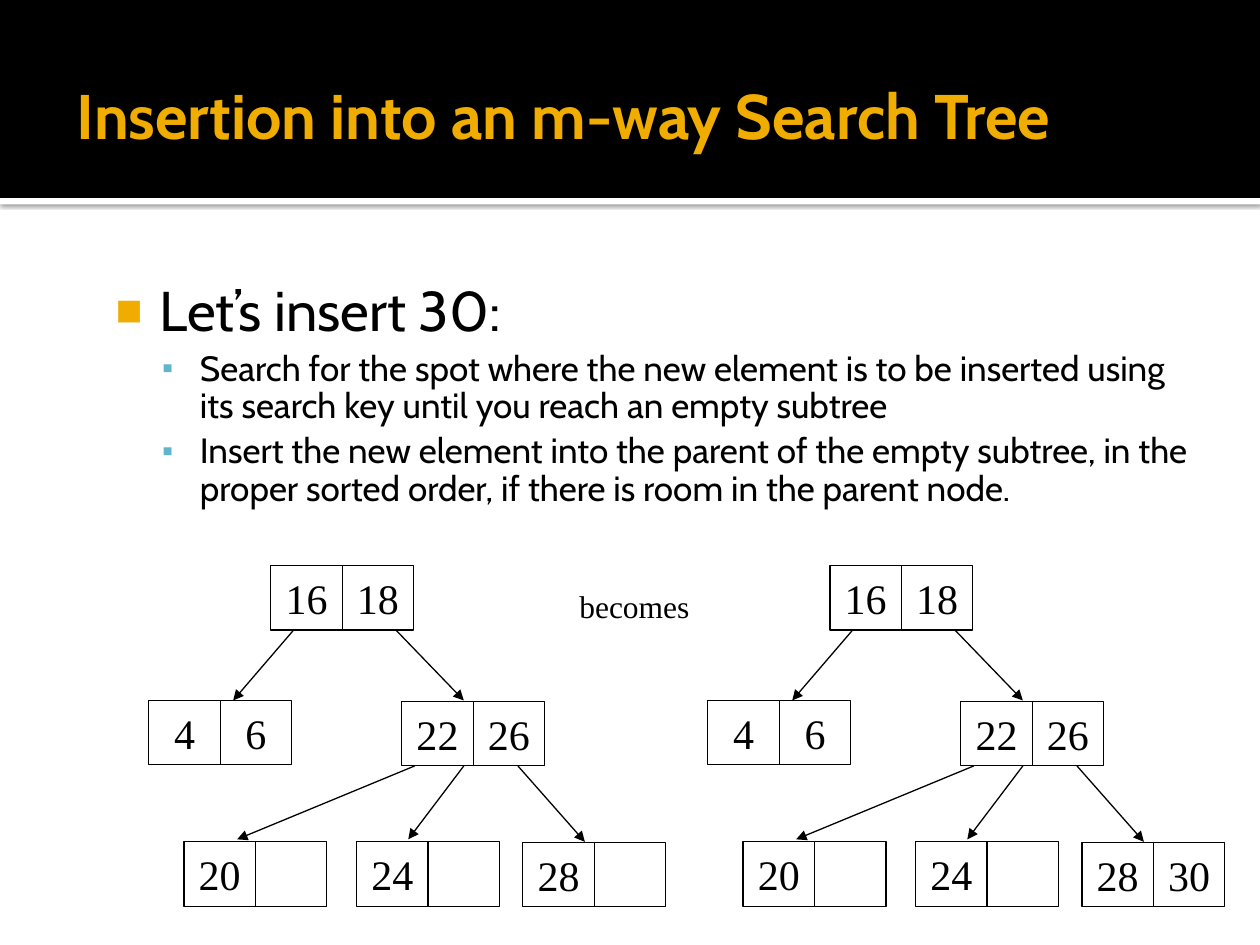
from lxml.etree import SubElement
from pptx import Presentation
from pptx.dml.color import RGBColor
from pptx.enum.shapes import MSO_CONNECTOR, MSO_SHAPE
from pptx.enum.text import MSO_ANCHOR, MSO_AUTO_SIZE, PP_ALIGN
from pptx.oxml import parse_xml
from pptx.oxml.ns import nsdecls, qn
from pptx.util import Cm, Pt

BLACK = RGBColor(0x00, 0x00, 0x00)
WHITE = RGBColor(0xFF, 0xFF, 0xFF)
GOLD = RGBColor(0xF0, 0xAD, 0x00)
SKY = RGBColor(0x60, 0xB5, 0xCC)

# Tree geometry in centimetres
CELL_WIDTH, CELL_HEIGHT = 1.44, 1.3
TREE_SHIFT = 11.27
NODES = [  # left, top, keys
    (5.46, 11.4, ("16", "18")),
    (3.0, 14.12, ("4", "6")),
    (8.1, 14.14, ("22", "26")),
    (3.71, 16.97, ("20", "")),
    (7.19, 16.97, ("24", "")),
]
LAST_LEAF = (10.54, 16.98)
EDGES = [  # start x, start y, end x, end y
    (5.92, 12.7, 4.7, 14.12),
    (7.98, 12.7, 9.35, 14.12),
    (8.36, 15.44, 4.78, 16.92),
    (9.35, 15.44, 8.23, 16.92),
    (10.44, 15.44, 11.79, 16.97),
]


def write_text(paragraph, text, size, font="Times New Roman", color=BLACK,
               bold=False, align=PP_ALIGN.LEFT):
    paragraph.alignment = align
    run = paragraph.add_run()
    run.text = text
    run.font.name = font
    run.font.size = Pt(size)
    run.font.bold = bold
    run.font.color.rgb = color


def set_bullet(paragraph, mark, color, percent, margin, hanging):
    properties = paragraph._p.get_or_add_pPr()
    properties.set("marL", str(Cm(margin)))
    properties.set("indent", str(-Cm(hanging)))
    bullet_color = SubElement(properties, qn("a:buClr"))
    SubElement(bullet_color, qn("a:srgbClr"), val=str(color))
    SubElement(properties, qn("a:buSzPct"), val=str(percent * 1000))
    SubElement(properties, qn("a:buFont"), typeface="Arial")
    SubElement(properties, qn("a:buChar"), char=mark)


class SlideBuilder:
    heading_font = "Cabin"
    line_width = Pt(0.75)

    def __init__(self, slide):
        self.slide = slide

    def band(self, top, height, color):
        """Full-width bar placed behind everything else."""
        shape = self.slide.shapes.add_shape(
            MSO_SHAPE.RECTANGLE, 0, Cm(top), Cm(25.4), Cm(height))
        shape.shadow.inherit = False
        shape.fill.solid()
        shape.fill.fore_color.rgb = color
        shape.line.fill.background()
        self.slide.shapes._spTree.insert(2, shape._element)
        return shape

    def drop_shadow(self, shape):
        effects = shape._element.spPr.find(qn("a:effectLst"))
        effects.append(parse_xml(
            f'<a:outerShdw {nsdecls("a")} blurRad="{Pt(2.5)}" dist="{Pt(0.8)}" '
            'dir="5400000" algn="tl" rotWithShape="0"><a:srgbClr val="000000">'
            '<a:alpha val="60000"/></a:srgbClr></a:outerShdw>'))

    def place(self, shape, left, top, width, height, margins, anchor):
        shape.left, shape.top = Cm(left), Cm(top)
        shape.width, shape.height = Cm(width), Cm(height)
        frame = shape.text_frame
        frame.word_wrap = True
        frame.auto_size = MSO_AUTO_SIZE.NONE
        frame.vertical_anchor = anchor
        (frame.margin_left, frame.margin_top,
         frame.margin_right, frame.margin_bottom) = map(Cm, margins)
        return frame

    def title(self, text):
        frame = self.place(self.slide.shapes.title, 1.3, 0.71, 22.78, 3.18,
                           (0.25, 0.13, 0.13, 0.13), MSO_ANCHOR.MIDDLE)
        write_text(frame.paragraphs[0], text, 36, font=self.heading_font,
                   color=GOLD, bold=True)

    def body(self, heading, points):
        frame = self.place(self.slide.placeholders[1], 1.85, 5.46, 22.38, 5.49,
                           (0.15, 0.25, 0.25, 0.13), MSO_ANCHOR.TOP)
        paragraph = frame.paragraphs[0]
        paragraph.line_spacing = 0.9
        paragraph.space_before = Pt(0)
        set_bullet(paragraph, "■", GOLD, 80, 1.22, 0.89)
        write_text(paragraph, heading, 32, font=self.heading_font)
        for point in points:
            paragraph = frame.add_paragraph()
            paragraph.level = 1
            paragraph.line_spacing = 0.9
            paragraph.space_before = Pt(4)
            set_bullet(paragraph, "▪", SKY, 90, 2.03, 0.76)
            write_text(paragraph, point, 20, font=self.heading_font)

    def label(self, text, left, top, width, height):
        shape = self.slide.shapes.add_textbox(
            Cm(left), Cm(top), Cm(width), Cm(height))
        shape.text_frame.word_wrap = False
        write_text(shape.text_frame.paragraphs[0], text, 18)

    def cell(self, left, top, key):
        shape = self.slide.shapes.add_shape(
            MSO_SHAPE.RECTANGLE, Cm(left), Cm(top), Cm(CELL_WIDTH), Cm(CELL_HEIGHT))
        shape.shadow.inherit = False
        shape.fill.background()
        shape.line.color.rgb = BLACK
        shape.line.width = self.line_width
        if key:
            write_text(shape.text_frame.paragraphs[0], key, 24,
                       align=PP_ALIGN.CENTER)

    def arrow(self, start_x, start_y, end_x, end_y):
        connector = self.slide.shapes.add_connector(
            MSO_CONNECTOR.STRAIGHT, Cm(start_x), Cm(start_y), Cm(end_x), Cm(end_y))
        connector.line.color.rgb = BLACK
        connector.line.width = self.line_width
        SubElement(connector.line._get_or_add_ln(), qn("a:tailEnd"), type="triangle")
        SubElement(connector._element.spPr, qn("a:effectLst"))

    def tree(self, shift, last_keys):
        for left, top, keys in NODES + [(*LAST_LEAF, last_keys)]:
            for column, key in enumerate(keys):
                self.cell(left + shift + column * CELL_WIDTH, top, key)
        for start_x, start_y, end_x, end_y in EDGES:
            self.arrow(start_x + shift, start_y, end_x + shift, end_y)


def main():
    presentation = Presentation()
    presentation.slide_width, presentation.slide_height = Cm(25.4), Cm(19.05)
    slide = presentation.slides.add_slide(presentation.slide_layouts[1])
    builder = SlideBuilder(slide)

    # Header bands
    builder.band(0, 3.99, BLACK)
    builder.drop_shadow(builder.band(3.99, 0.13, WHITE))

    # Title and list
    builder.title("Insertion into an m-way Search Tree")
    builder.body("Let’s insert 30:", [
        "Search for the spot where the new element is to be inserted using "
        "its search key until you reach an empty subtree",
        "Insert the new element into the parent of the empty subtree, in the "
        "proper sorted order, if there is room in the parent node.",
    ])

    # Trees before and after the insertion
    builder.label("becomes", 11.43, 11.71, 2.74, 1.02)
    builder.tree(0, ("28", ""))
    builder.tree(TREE_SHIFT, ("28", "30"))

    presentation.save("out.pptx")


if __name__ == "__main__":
    main()
